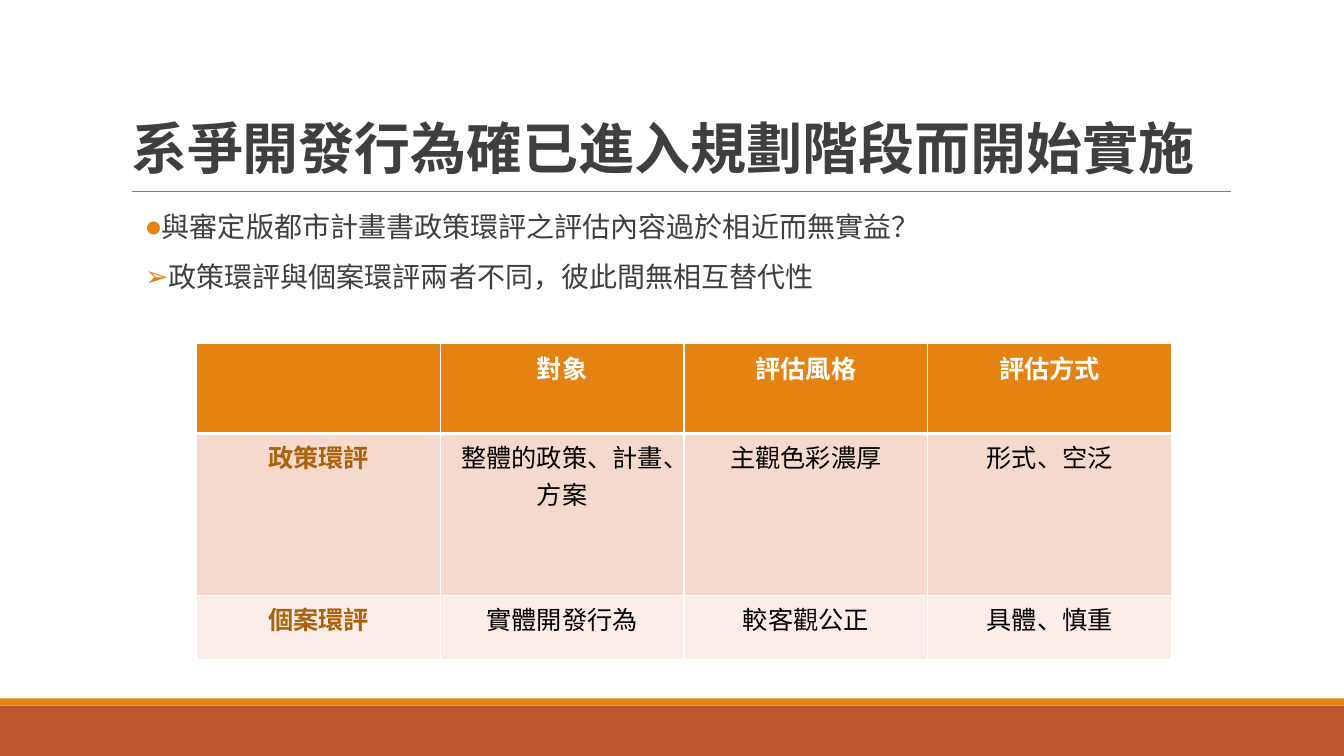
from dataclasses import dataclass

from lxml import etree
from pptx import Presentation
from pptx import util as u
from pptx.dml.color import RGBColor
from pptx.enum import shapes, text
from pptx.oxml import ns


@dataclass(frozen=True)
class Theme:
    rust: str = "BD582C"
    orange: str = "E48312"
    brown: str = "AB620D"
    grey: str = "3F3F3F"
    rule: str = "7F7F7F"
    white: str = "FFFFFF"
    black: str = "000000"
    bands: tuple = ("F5D9CC", "FAEDE7")
    face: str = "Calibri"
    grid: str = "Arial"
    head: int = 40
    body: int = 20
    cell: int = 18


T = Theme()
TITLE = "系爭開發行為確已進入規劃階段而開始實施"
POINTS = [
    ("●", "與審定版都市計畫書政策環評之評估內容過於相近而無實益？"),
    ("➢", "政策環評與個案環評兩者不同，彼此間無相互替代性"),
]
ROWS = [
    ("", "對象", "評估風格", "評估方式"),
    ("政策環評", "整體的政策、計畫、方案", "主觀色彩濃厚", "形式、空泛"),
    ("個案環評", "實體開發行為", "較客觀公正", "具體、慎重"),
]


def px(n):
    """Length in EMU, at 100 px to the inch."""
    return u.Emu(n * 9144)


def style(par, face, size, color, bold=False):
    font = par.font
    font.name, font.size, font.bold = face, u.Pt(size), bold
    font.color.rgb = RGBColor.from_string(color)


def inset(frame):
    frame.word_wrap = True
    frame.auto_size = text.MSO_AUTO_SIZE.NONE
    frame.margin_left = frame.margin_right = px(10)
    frame.margin_top = frame.margin_bottom = px(10)


def add(node, tag, **attrs):
    return etree.SubElement(node, ns.qn(tag), attrs)


def draw_band(slide, x, y, w, h, color):
    band = slide.shapes.add_shape(
        shapes.MSO_SHAPE.RECTANGLE, px(x), px(y), px(w), px(h))
    band.shadow.inherit = False
    band.fill.solid()
    band.fill.fore_color.rgb = RGBColor.from_string(color)
    band.line.fill.background()


def draw_foot(slide, x, y, w, h):
    strip = 7
    draw_band(slide, x, y + strip, w, h - strip, T.rust)
    draw_band(slide, x, y, w, strip, T.orange)


def draw_title(slide, x, y, w, h):
    title = slide.shapes.title
    title.left, title.top, title.width, title.height = map(px, (x, y, w, h))
    frame = title.text_frame
    frame.text = TITLE
    inset(frame)
    frame.vertical_anchor = text.MSO_ANCHOR.BOTTOM
    par = frame.paragraphs[0]
    par.alignment = text.PP_ALIGN.LEFT
    par.line_spacing = 0.85
    style(par, T.face, T.head, T.grey, True)

    base = px(y + h)
    rule = slide.shapes.add_connector(
        shapes.MSO_CONNECTOR.STRAIGHT, px(x + 11), base, px(x + w + 1), base)
    rule.line.color.rgb = RGBColor.from_string(T.rule)
    rule.line.width = u.Pt(0.75)
    add(rule._element.spPr, "a:effectLst")


def draw_points(slide, x, y, w, h):
    box = slide.shapes.add_textbox(px(x), px(y), px(w), px(h))
    frame = box.text_frame
    inset(frame)
    for i, (mark, words) in enumerate(POINTS):
        par = frame.add_paragraph() if i else frame.paragraphs[0]
        par.text = words
        par.line_spacing = 0.9
        par.space_before, par.space_after = u.Pt(12), u.Pt(2)
        props = par._p.get_or_add_pPr()
        props.set("marL", str(px(10)))
        props.set("indent", str(px(4)))
        add(add(props, "a:buClr"), "a:srgbClr", val=T.orange)
        add(props, "a:buFont", typeface=T.face)
        add(props, "a:buChar", char=mark)
        style(par, T.face, T.body, T.grey)


def edge(cell, **widths):
    """White borders, each width in points; sides in the order L, R, T, B."""
    props = cell._tc.get_or_add_tcPr()
    for side, pt in widths.items():
        line = add(props, "a:ln" + side, w=str(u.Pt(pt)))
        add(add(line, "a:solidFill"), "a:srgbClr", val=T.white)


def draw_table(slide, x, y, w, h):
    highs = (89, 161, h - 250)
    cols = len(ROWS[0])
    table = slide.shapes.add_table(
        len(ROWS), cols, px(x), px(y), px(w), px(h)).table
    for col in table.columns:
        col.width = px(w) // cols
    for r, (row, high) in enumerate(zip(ROWS, highs)):
        table.rows[r].height = px(high)
        for c, words in enumerate(row):
            cell = table.cell(r, c)
            cell.text = words
            edge(cell, L=1, R=1, T=3 if r == 1 else 1, B=1 if r else 3)
            cell.fill.solid()
            fill = T.bands[r - 1] if r else T.orange
            cell.fill.fore_color.rgb = RGBColor.from_string(fill)
            par = cell.text_frame.paragraphs[0]
            par.alignment = text.PP_ALIGN.CENTER
            color = T.white if r == 0 else T.black if c else T.brown
            style(par, T.grid, T.cell, color, r == 0 or c == 0)


def main():
    deck = Presentation()
    deck.slide_width, deck.slide_height = px(1333), px(750)
    slide = deck.slides.add_slide(deck.slide_layouts[5])
    draw_foot(slide, 0, 693, 1333, 57)
    draw_title(slide, 120, 31, 1100, 159)
    draw_points(slide, 120, 202, 1100, 440)
    draw_table(slide, 195, 341, 967, 313)
    deck.save("out.pptx")


if __name__ == "__main__":
    main()
